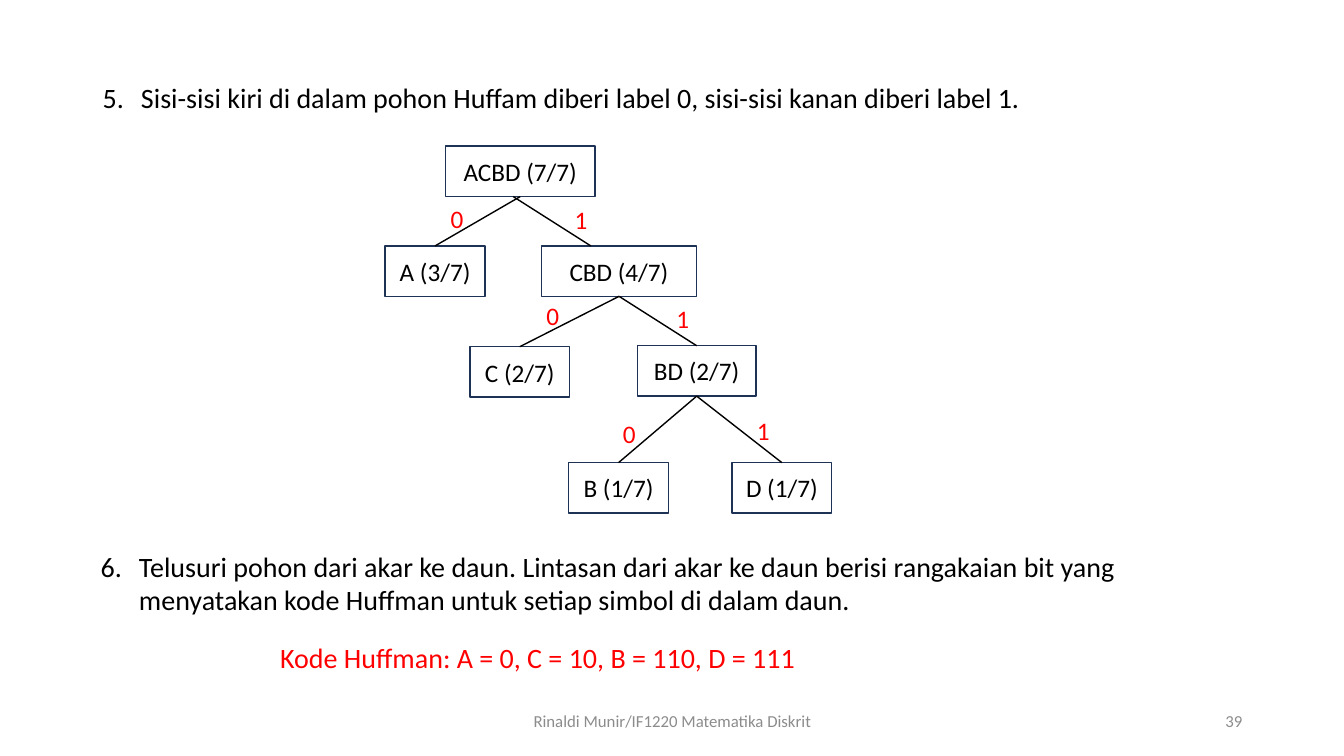
from lxml import etree
from pptx import Presentation
from pptx.dml.color import RGBColor
from pptx.enum.shapes import MSO_CONNECTOR as Connector, MSO_SHAPE as Shape
from pptx.enum.text import MSO_ANCHOR as Anchor, PP_ALIGN as Align
from pptx.oxml.ns import qn
from pptx.util import Pt

PX = 9144  # 100 px to the inch
COLORS = {"text": "000000", "accent": "FF0000", "border": "1E3256", "footer": "8C8C8C"}
FONT = "Calibri"

# Numbered steps: text, (left, top, width, height)
STEPS = [
    ("5.\tSisi-sisi kiri di dalam pohon Huffam diberi label 0, sisi-sisi kanan diberi label 1.",
     (92, 75, 1070, 44)),
    ("6.\tTelusuri pohon dari akar ke daun. Lintasan dari akar ke daun berisi rangakaian bit yang "
     "menyatakan kode Huffman untuk setiap simbol di dalam daun.",
     (90, 540, 1070, 77)),
]
STEP_INDENT = 38
RESULT = ("Kode Huffman: A = 0, C = 10, B = 110, D = 111", (268, 634, 693, 72))
FOOTERS = [
    ("Rinaldi Munir/IF1220 Matematika Diskrit", (442, 695, 450, 40), Align.CENTER),
    ("39", (942, 695, 300, 40), Align.RIGHT),
]

# Tree nodes: symbols -> (frequency, left, top, width)
NODE_HEIGHT = 50
NODES = {
    "ACBD": ("7/7", 442, 145, 148),
    "A": ("3/7", 382, 244, 99),
    "CBD": ("4/7", 537, 244, 154),
    "C": ("2/7", 466, 344, 99),
    "BD": ("2/7", 632, 343, 118),
    "B": ("1/7", 564, 459, 99),
    "D": ("1/7", 726, 459, 99),
}
# Tree edges: parent, child, bit, bit position, sideways shift of the two ends
EDGES = [
    ("ACBD", "A", "0", (437, 197), (0, 0)),
    ("ACBD", "CBD", "1", (560, 198), (-7, -28)),
    ("CBD", "C", "0", (532, 293), (0, 0)),
    ("CBD", "BD", "1", (661, 296), (0, 0)),
    ("BD", "B", "0", (608, 410), (0, 0)),
    ("BD", "D", "1", (741, 407), (0, 0)),
]
BIT_SIZE = (33, 40)


def emu(*lengths):
    return [round(length * PX) for length in lengths]


def rgb(name):
    return RGBColor.from_string(COLORS[name])


def write(shape, text, size, color="text", align=Align.LEFT, anchor=Anchor.TOP, wrap=True):
    frame = shape.text_frame
    frame.word_wrap = wrap
    frame.vertical_anchor = anchor
    frame.text = text
    paragraph = frame.paragraphs[0]
    paragraph.alignment = align
    font = paragraph.runs[0].font
    font.name, font.size, font.color.rgb = FONT, Pt(size), rgb(color)
    return paragraph


def add_text(box, text, size, **style):
    return write(slide.shapes.add_textbox(*emu(*box)), text, size, **style)


def add_node(symbols, frequency, left, top, width):
    shape = slide.shapes.add_shape(Shape.RECTANGLE, *emu(left, top, width, NODE_HEIGHT))
    shape.shadow.inherit = False
    shape.fill.background()
    shape.line.color.rgb = rgb("border")
    shape.line.width = Pt(1)
    write(shape, f"{symbols} ({frequency})", 18, align=Align.CENTER, anchor=Anchor.MIDDLE)


def add_edge(parent, child, shifts):
    _, left, top, width = NODES[parent]
    start = (left + width / 2 + shifts[0], top + NODE_HEIGHT)
    _, left, top, width = NODES[child]
    end = (left + width / 2 + shifts[1], top)
    line = slide.shapes.add_connector(Connector.STRAIGHT, *emu(*start, *end))
    line.line.color.rgb = rgb("text")
    line.line.width = Pt(1)
    etree.SubElement(line._element.spPr, qn("a:effectLst"))


presentation = Presentation()
presentation.slide_width, presentation.slide_height = emu(1333, 750)
slide = presentation.slides.add_slide(presentation.slide_layouts[6])

# Footer
for text, box, align in FOOTERS:
    add_text(box, text, 12, color="footer", align=align, anchor=Anchor.MIDDLE)

# Numbered steps with a hanging indent
for text, box in STEPS:
    properties = add_text(box, text, 20)._p.get_or_add_pPr()
    properties.set("marL", str(STEP_INDENT * PX))
    properties.set("indent", str(-STEP_INDENT * PX))

# Huffman tree
for symbols, node in NODES.items():
    add_node(symbols, *node)
for parent, child, bit, position, shifts in EDGES:
    add_edge(parent, child, shifts)
    add_text(position + BIT_SIZE, bit, 18, color="accent", wrap=False)

# Resulting code
text, box = RESULT
add_text(box, text, 20, color="accent").line_spacing = 0.9

presentation.save("out.pptx")
